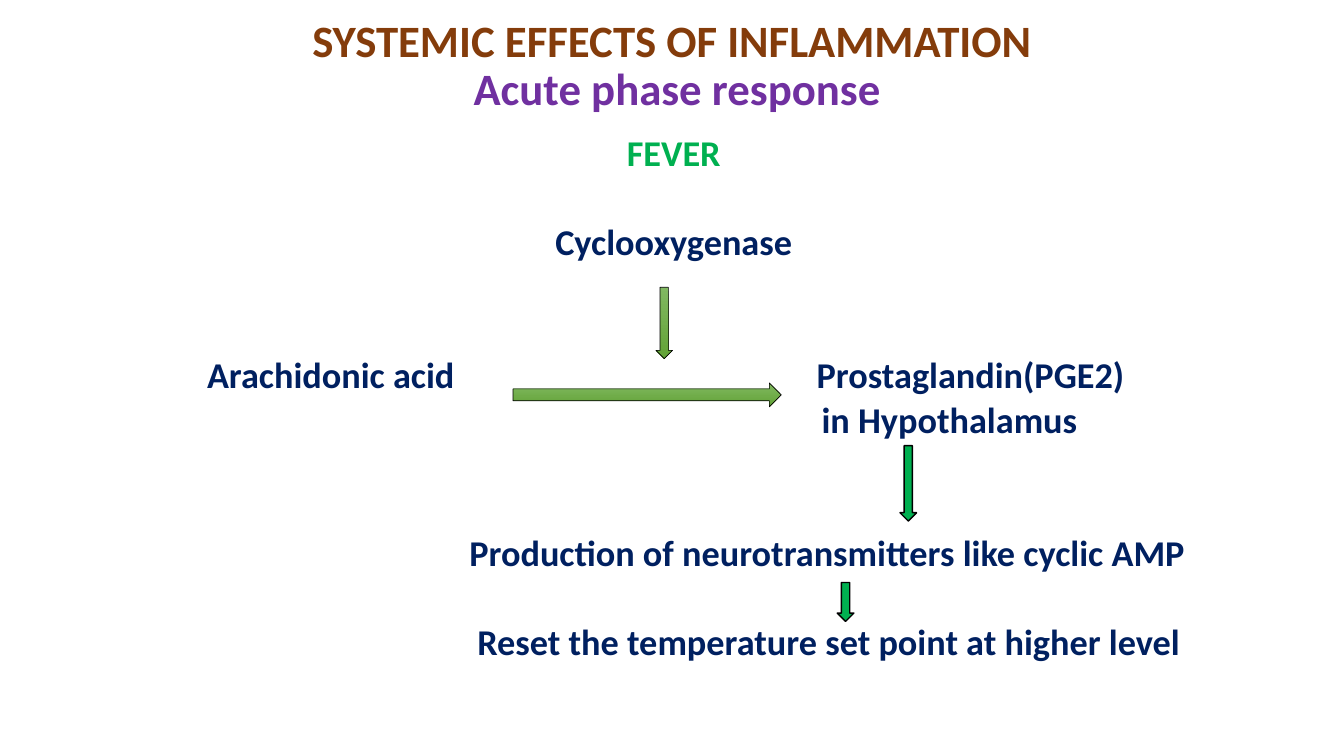
import pptx
import pptx.dml.color
import pptx.enum.shapes
import pptx.enum.text
import pptx.util
from dataclasses import dataclass

Cm = pptx.util.Cm
Pt = pptx.util.Pt
Shape = pptx.enum.shapes.MSO_SHAPE
Align = pptx.enum.text.PP_ALIGN
Anchor = pptx.enum.text.MSO_ANCHOR


@dataclass(frozen=True)
class Theme:
    font: str = "Calibri"
    title_size: float = 32
    body_size: float = 25.9
    brown: str = "843C0B"
    purple: str = "7030A0"
    green: str = "00B050"
    navy: str = "002060"
    outline: str = "000000"
    gradient: tuple = ("81B861", "62A336")


THEME = Theme()

TITLE = "SYSTEMIC EFFECTS OF INFLAMMATION"
SUBTITLE = " Acute phase response"

# text, row, centre x in cm, width in cm, colour
LABELS = [
    ("FEVER", 0, 16.98, 6, THEME.green),
    ("Cyclooxygenase", 2, 16.98, 9, THEME.navy),
    ("Arachidonic acid", 5, 8.34, 9, THEME.navy),
    ("Prostaglandin(PGE2)", 5, 24.46, 10, THEME.navy),
    ("in Hypothalamus", 6, 23.93, 9, THEME.navy),
    ("Production of neurotransmitters like cyclic AMP", 9, 20.85, 21, THEME.navy),
    ("Reset the temperature set point at higher level", 11, 20.89, 21, THEME.navy),
]
FIRST_ROW, ROW_PITCH = 3.83, 1.12

# shape, left, top, width, height in cm, fill (one colour or a gradient), line width in pt
ARROWS = [
    (Shape.RIGHT_ARROW, 12.93, 9.65, 6.76, 0.6, THEME.gradient, 0.5),
    (Shape.DOWN_ARROW, 16.53, 7.24, 0.42, 1.8, THEME.gradient, 0.5),
    (Shape.DOWN_ARROW, 22.68, 11.23, 0.42, 1.9, THEME.green, 1),
    (Shape.DOWN_ARROW, 21.1, 14.68, 0.42, 0.98, THEME.green, 1),
]


def rgb(code):
    return pptx.dml.color.RGBColor.from_string(code)


def add_run(para, text, size, color):
    span = para.add_run()
    span.text = text
    span.font.name = THEME.font
    span.font.size = Pt(size)
    span.font.bold = True
    span.font.color.rgb = rgb(color)


def fill_title(slide):
    title = slide.shapes.title
    title.left, title.top = Cm(4.24), Cm(0)
    title.width, title.height = Cm(25.4), Cm(3.38)
    frame = title.text_frame
    frame.auto_size = pptx.enum.text.MSO_AUTO_SIZE.NONE
    frame.vertical_anchor = Anchor.MIDDLE
    para = frame.paragraphs[0]
    para.alignment = Align.CENTER
    para.line_spacing = 0.9
    add_run(para, TITLE, THEME.title_size, THEME.brown)
    para.add_line_break()
    add_run(para, SUBTITLE, THEME.title_size, THEME.purple)


def add_label(slide, text, row, center, width, color):
    middle = FIRST_ROW + row * ROW_PITCH
    box = slide.shapes.add_textbox(
        Cm(center - width / 2), Cm(middle - ROW_PITCH / 2), Cm(width), Cm(ROW_PITCH))
    frame = box.text_frame
    frame.word_wrap = True
    frame.vertical_anchor = Anchor.MIDDLE
    frame.margin_top = frame.margin_bottom = 0
    para = frame.paragraphs[0]
    para.alignment = Align.CENTER
    add_run(para, text, THEME.body_size, color)


def add_arrow(slide, kind, left, top, width, height, fill, line_width):
    arrow = slide.shapes.add_shape(kind, Cm(left), Cm(top), Cm(width), Cm(height))
    arrow.shadow.inherit = False
    if isinstance(fill, tuple):
        arrow.fill.gradient()
        arrow.fill.gradient_angle = 270
        for stop, color in zip(arrow.fill.gradient_stops, fill):
            stop.color.rgb = rgb(color)
    else:
        arrow.fill.solid()
        arrow.fill.fore_color.rgb = rgb(fill)
    arrow.line.color.rgb = rgb(THEME.outline)
    arrow.line.width = Pt(line_width)


def main():
    deck = pptx.Presentation()
    deck.slide_width, deck.slide_height = Cm(33.87), Cm(19.05)
    slide = deck.slides.add_slide(deck.slide_layouts.get_by_name("Title Only"))
    fill_title(slide)
    for label in LABELS:
        add_label(slide, *label)
    for arrow in ARROWS:
        add_arrow(slide, *arrow)
    deck.save("out.pptx")


if __name__ == "__main__":
    main()
